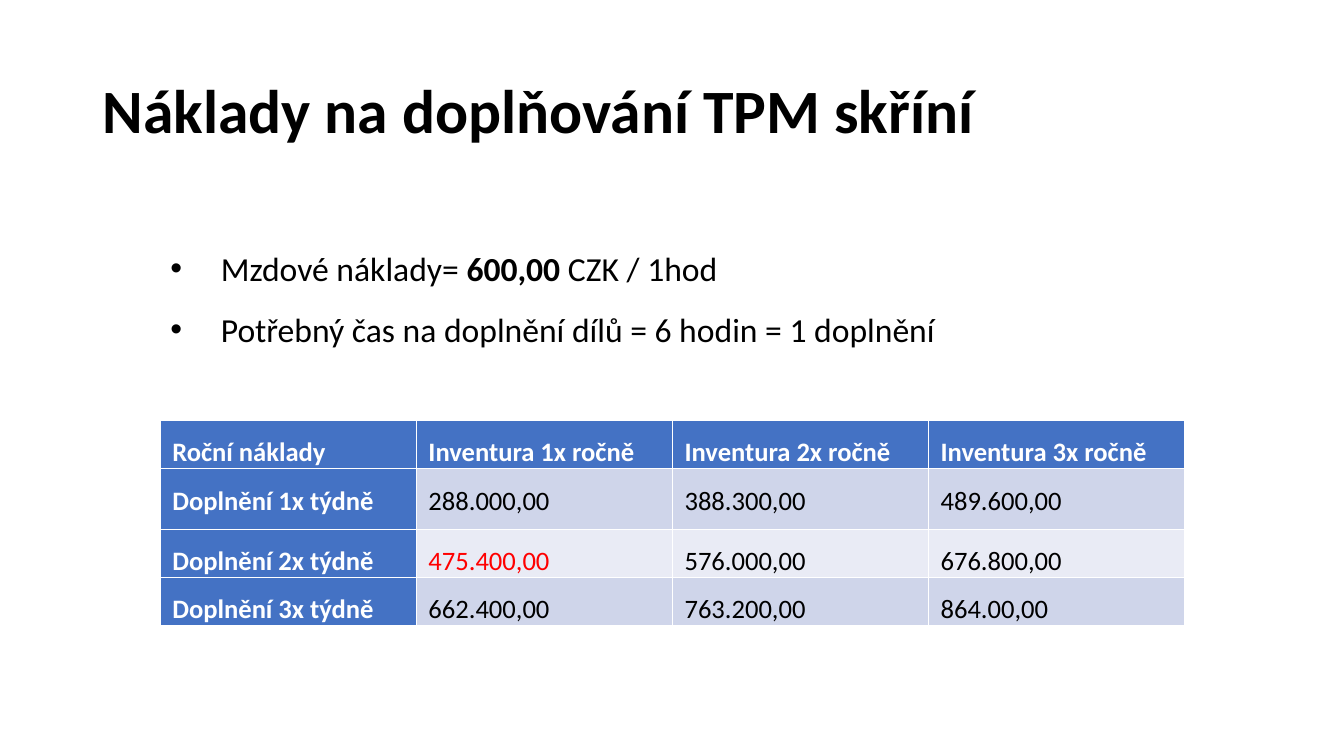
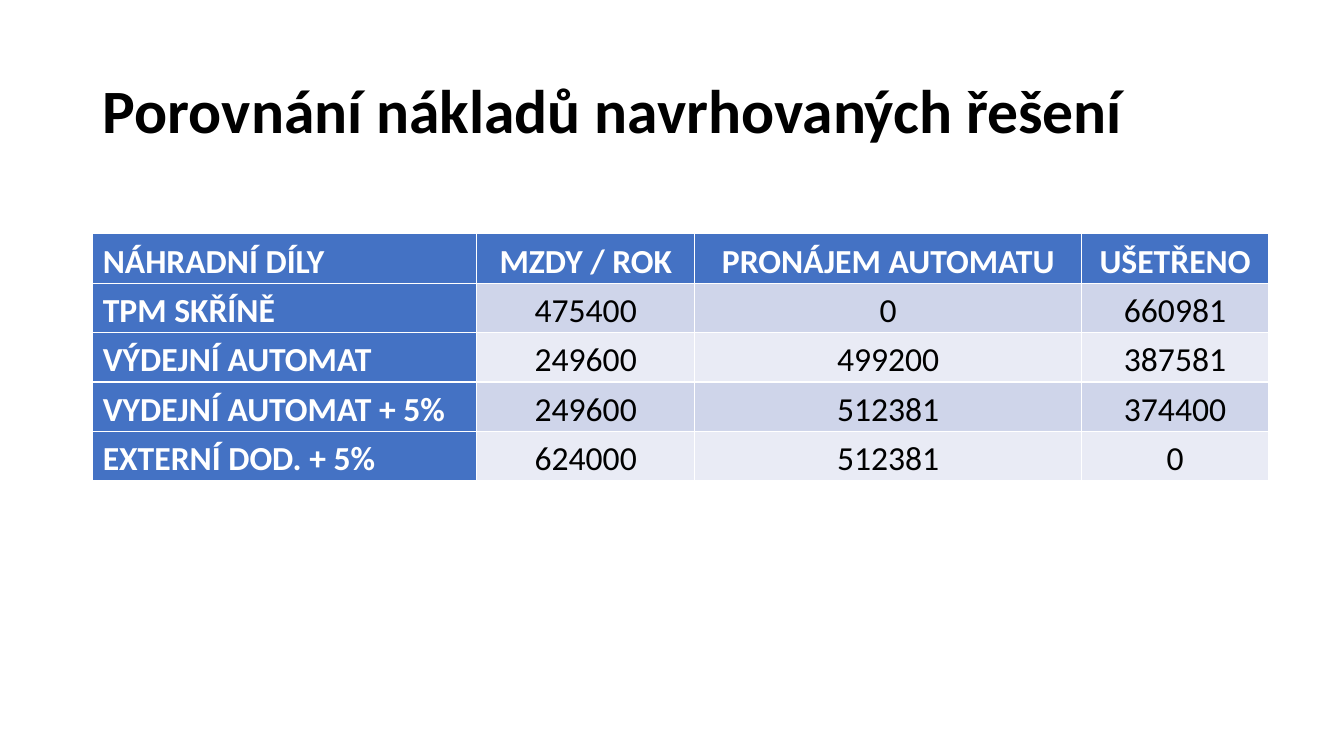
from pptx import Presentation
from pptx.dml.color import RGBColor
from pptx.enum import text as t
from pptx.util import Inches, Pt

BLACK = RGBColor(0x00, 0x00, 0x00)
WHITE = RGBColor(0xFF, 0xFF, 0xFF)
RED = RGBColor(0xFF, 0x00, 0x00)
BLUE = RGBColor(0x44, 0x72, 0xC4)
BANDS = [RGBColor(0xE9, 0xEB, 0xF5), RGBColor(0xCF, 0xD5, 0xEA)]
FONT = "Calibri"
LEFT, MID, JUST = t.PP_ALIGN.LEFT, t.PP_ALIGN.CENTER, t.PP_ALIGN.JUSTIFY
TOP, CENTER = t.MSO_ANCHOR.TOP, t.MSO_ANCHOR.MIDDLE


def write(para, *parts, size=24, color=BLACK, bold=False, align=LEFT, space=1.0):
    para.alignment = align
    para.line_spacing = space
    para.space_before = para.space_after = Pt(0)
    for part in parts:
        words, heavy = part if isinstance(part, tuple) else (part, bold)
        run = para.add_run()
        run.text = words
        run.font.name = FONT
        run.font.size = Pt(size)
        run.font.bold = heavy
        run.font.color.rgb = color


def grid(slide, rows, x, y, wide, high, pad, anchor, align, **style):
    table = slide.shapes.add_table(
        len(rows), len(wide), Inches(x), Inches(y),
        Inches(sum(wide)), Inches(sum(high))).table
    table.first_col = True
    for col, width in zip(table.columns, wide):
        col.width = Inches(width)
    for r, row in enumerate(rows):
        table.rows[r].height = Inches(high[r])
        for c, words in enumerate(row):
            cell = table.cell(r, c)
            head = r == 0 or c == 0
            cell.fill.solid()
            cell.fill.fore_color.rgb = BLUE if head else BANDS[r % 2]
            cell.margin_left = cell.margin_right = Inches(pad)
            cell.margin_top = cell.margin_bottom = 0
            cell.vertical_anchor = anchor
            color = WHITE if head else RED if words == "475.400,00" else BLACK
            write(cell.text_frame.paragraphs[0], words, color=color, bold=head,
                  align=align[c], **style)


deck = Presentation()
deck.slide_width, deck.slide_height = Inches(13.33), Inches(7.5)

slides = []
for kind, name in [(1, "Náklady na doplňování TPM skříní"),
                   (5, "Porovnání nákladů navrhovaných řešení")]:
    slide = deck.slides.add_slide(deck.slide_layouts[kind])
    title = slide.shapes.title
    title.left, title.top = Inches(0.92), Inches(0.4)
    title.width, title.height = Inches(11.5), Inches(1.45)
    title.text_frame.vertical_anchor = CENTER
    title.text_frame.auto_size = t.MSO_AUTO_SIZE.NONE
    write(title.text_frame.paragraphs[0], name, size=44, bold=True, space=0.9)
    slides.append(slide)
refill, compare = slides

body = refill.placeholders[1]
body.left, body.top = Inches(1.59), Inches(2.21)
body.width, body.height = Inches(10.15), Inches(1.24)
frame = body.text_frame
frame.auto_size = t.MSO_AUTO_SIZE.NONE
items = [["Mzdové náklady= ", ("600,00", True), " CZK / 1hod"],
         ["Potřebný čas na doplnění dílů = 6 hodin = 1 doplnění"]]
for i, parts in enumerate(items):
    para = frame.add_paragraph() if i else frame.paragraphs[0]
    props = para._p.get_or_add_pPr()
    props.set("marL", str(Inches(0.5)))
    props.set("indent", str(Inches(-0.5)))
    write(para, *parts, align=JUST, space=1.5)

costs = [
    ["Roční náklady", "Inventura 1x ročně", "Inventura 2x ročně", "Inventura 3x ročně"],
    ["Doplnění 1x týdně", "288.000,00", "388.300,00", "489.600,00"],
    ["Doplnění 2x týdně", "475.400,00", "576.000,00", "676.800,00"],
    ["Doplnění 3x týdně", "662.400,00", "763.200,00", "864.00,00"],
]
grid(refill, costs, 1.59, 4.17, [2.54] * 4, [0.42, 0.6, 0.42, 0.42],
     pad=0.12, anchor=TOP, align=[JUST] * 4, size=19, space=1.5)

offers = [
    ["NÁHRADNÍ DÍLY", "MZDY / ROK", "PRONÁJEM AUTOMATU", "UŠETŘENO"],
    ["TPM SKŘÍNĚ", "475400", "0", "660981"],
    ["VÝDEJNÍ AUTOMAT", "249600", "499200", "387581"],
    ["VYDEJNÍ AUTOMAT + 5%", "249600", "512381", "374400"],
    ["EXTERNÍ DOD. + 5%", "624000", "512381", "0"],
]
grid(compare, offers, 0.92, 2.32, [3.81, 2.16, 3.84, 1.85], [0.49] * 5,
     pad=0.1, anchor=CENTER, align=[LEFT] + [MID] * 3, space=1.15)

deck.save("out.pptx")
